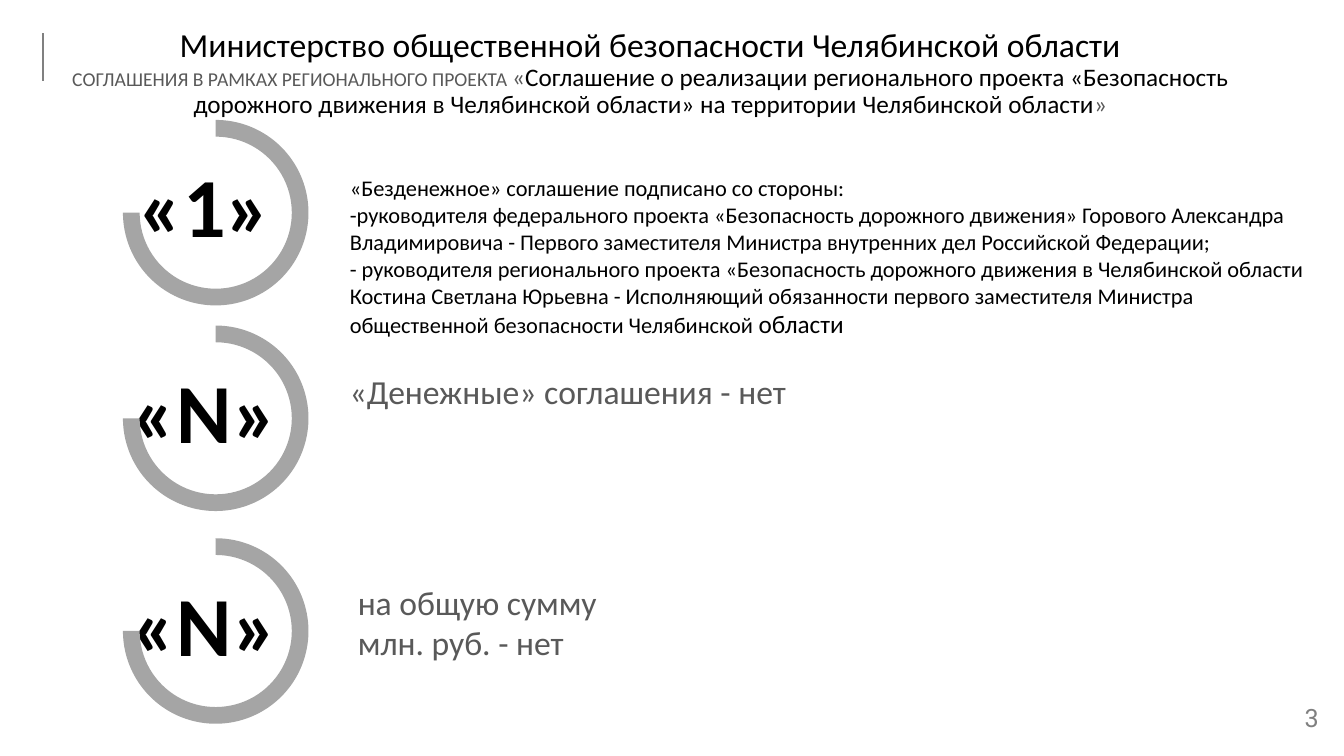
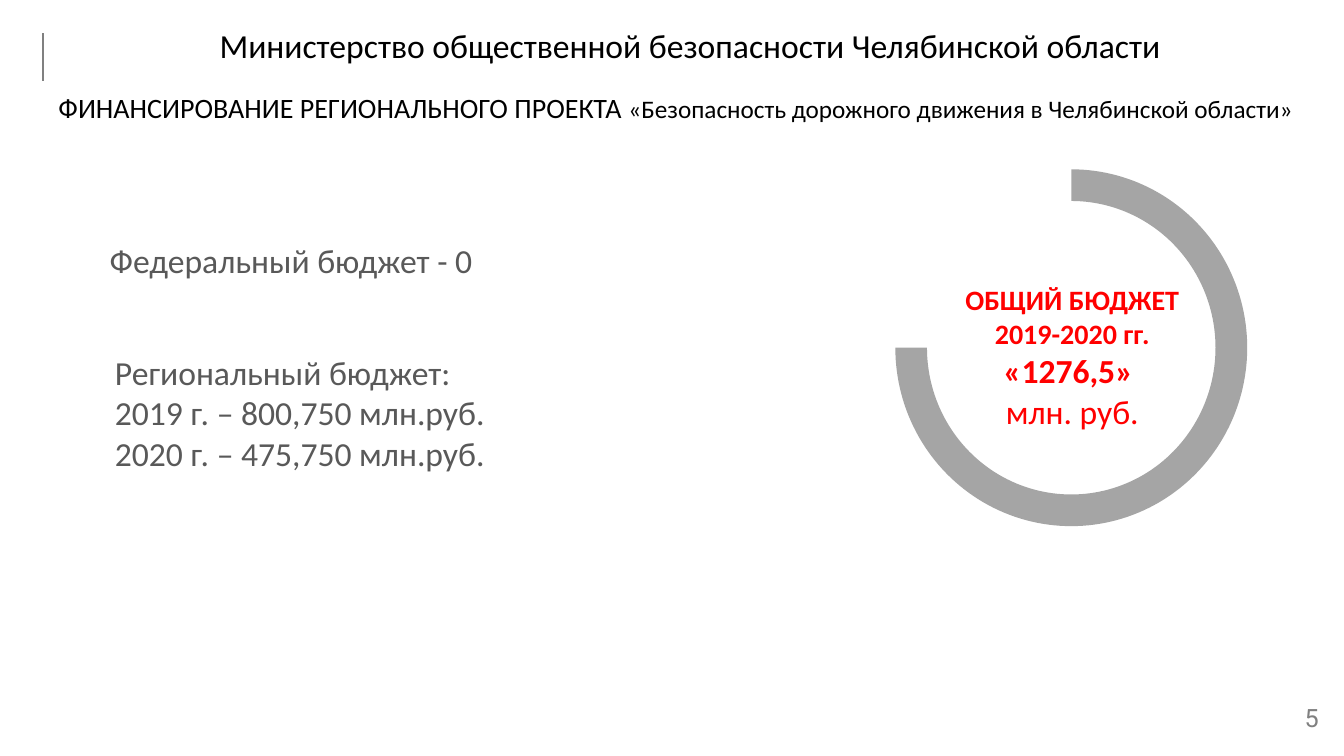
from dataclasses import dataclass

from pptx import Presentation
from pptx.dml.color import RGBColor
from pptx.enum.shapes import MSO_CONNECTOR, MSO_SHAPE
from pptx.enum.text import MSO_ANCHOR, MSO_AUTO_SIZE, PP_ALIGN
from pptx.oxml.ns import qn
from pptx.shapes.base import BaseShape
from pptx.slide import Slide
from pptx.util import Emu, Pt

LEFT, MID, JUST = PP_ALIGN.LEFT, PP_ALIGN.CENTER, PP_ALIGN.JUSTIFY
TOP, CENTRE = MSO_ANCHOR.TOP, MSO_ANCHOR.MIDDLE
FIXED = MSO_AUTO_SIZE.NONE
ARC = MSO_SHAPE.BLOCK_ARC
STRAIGHT = MSO_CONNECTOR.STRAIGHT
PX = 9144  # EMU in one px, 100 px to the inch


@dataclass(frozen=True)
class Theme:
    font: str = "Calibri"
    page_font: str = "Roboto"
    ink: str = "000000"
    text: str = "595959"
    ring: str = "A5A5A5"
    muted: str = "808080"
    alert: str = "FF0000"
    tiny: int = 14
    small: int = 16
    note: int = 18
    sub: int = 20
    main: int = 24
    huge: int = 60


T = Theme()


@dataclass(frozen=True)
class Box:
    left: int
    top: int
    width: int
    height: int

    def emu(self) -> list[Emu]:
        return [Emu(v * PX) for v in (self.left, self.top, self.width, self.height)]


@dataclass(frozen=True)
class Run:
    text: str
    size: int = T.main
    color: str = T.text
    bold: bool = False
    font: str = T.font


@dataclass(frozen=True)
class Para:
    runs: tuple[Run, ...]
    align: PP_ALIGN = JUST
    line: float = 1.0
    before: int = 0


@dataclass(frozen=True)
class Mark:
    """A label in a ring, with the top edge of that ring."""
    label: str
    top: int


def rgb(color: str) -> RGBColor:
    return RGBColor.from_string(color)


def fill_text(shape: BaseShape, paras: list[Para], anchor: MSO_ANCHOR = TOP) -> None:
    frame = shape.text_frame
    frame.word_wrap = True
    frame.auto_size = FIXED
    frame.vertical_anchor = anchor
    for i, item in enumerate(paras):
        para = frame.add_paragraph() if i else frame.paragraphs[0]
        para.alignment = item.align
        para.line_spacing = item.line
        para.space_before = Pt(item.before)
        para.space_after = Pt(0)
        for part in item.runs:
            run = para.add_run()
            run.text = part.text
            run.font.name = part.font
            run.font.size = Pt(part.size)
            run.font.bold = part.bold
            run.font.color.rgb = rgb(part.color)


def place(shape: BaseShape, box: Box) -> None:
    shape.left, shape.top, shape.width, shape.height = box.emu()


def add_text(slide: Slide, box: Box, paras: list[Para], anchor: MSO_ANCHOR = TOP) -> None:
    fill_text(slide.shapes.add_textbox(*box.emu()), paras, anchor)


def fill_body(slide: Slide, box: Box, paras: list[Para]) -> None:
    """Fills the body placeholder with plain, unbulleted lines."""
    body = slide.placeholders[1]
    place(body, box)
    fill_text(body, paras)
    for para in body.text_frame.paragraphs:
        props = para._p.get_or_add_pPr()
        props.set("marL", "0")
        props.set("indent", "0")
        props.append(props.makeelement(qn("a:buNone"), {}))


def add_ring(slide: Slide, box: Box) -> None:
    """Draws three quarters of a ring, open at the upper left."""
    ring = slide.shapes.add_shape(ARC, *box.emu())
    ring.shadow.inherit = False
    for i, value in enumerate((162, 108, 0.09)):
        ring.adjustments[i] = value
    ring.fill.solid()
    ring.fill.fore_color.rgb = rgb(T.ring)
    ring.line.fill.background()


def add_slide(deck: Presentation, page: str, box: Box, title: list[Para]) -> Slide:
    """Adds a slide with its title, side rule and page number."""
    slide = deck.slides.add_slide(deck.slide_layouts[1])
    place(slide.shapes.title, box)
    head = Para((Run("Министерство общественной безопасности Челябинской области",
                     color=T.ink),), MID, 0.9)
    fill_text(slide.shapes.title, [head, *title], CENTRE)
    rule = slide.shapes.add_connector(
        STRAIGHT, *(Emu(v * PX) for v in (43, 33, 43, 80)))
    rule.line.color.rgb = rgb(T.muted)
    rule.line.width = Pt(1.5)
    props = rule._element.spPr
    props.append(props.makeelement(qn("a:effectLst"), {}))
    number = Run(page, T.note, T.muted, font=T.page_font)
    add_text(slide, Box(1269, 690, 64, 50), [Para((number,), MID, 0.8)], CENTRE)
    return slide


def add_deals(deck: Presentation) -> None:
    title = Para((
        Run("СОГЛАШЕНИЯ В РАМКАХ РЕГИОНАЛЬНОГО ПРОЕКТА ", T.tiny),
        Run("«", T.note),
        Run("Соглашение о реализации регионального проекта «Безопасность дорожного "
            "движения в Челябинской области» на территории Челябинской области",
            T.note, T.ink),
        Run("»", T.note)), MID, 0.9)
    slide = add_slide(deck, "3", Box(48, 26, 1194, 94), [title])
    lines = (
        "«Безденежное» соглашение подписано со стороны:",
        "-руководителя федерального проекта «Безопасность дорожного движения» "
        "Горового Александра Владимировича - Первого заместителя Министра "
        "внутренних дел Российской Федерации;",
        "- руководителя регионального проекта «Безопасность дорожного движения "
        "в Челябинской области Костина Светлана Юрьевна - Исполняющий обязанности "
        "первого заместителя Министра общественной безопасности Челябинской ",
    )
    runs = [(Run(line, T.small, T.ink),) for line in lines]
    runs[-1] += (Run("области", T.note, T.ink),)
    fill_body(slide, Box(337, 168, 977, 215), [Para(r, LEFT) for r in runs])
    for mark in (Mark("«1»", 119), Mark("«N»", 323), Mark("«N»", 534)):
        label = Run(mark.label, T.huge, T.ink, True)
        add_text(slide, Box(80, mark.top + 28, 246, 111), [Para((label,), MID)], CENTRE)
        add_ring(slide, Box(122, mark.top, 184, 184))
    add_text(slide, Box(337, 363, 566, 50), [Para((Run("«Денежные» соглашения - нет"),))])
    add_text(slide, Box(345, 572, 549, 91),
             [Para((Run(line),)) for line in ("на общую сумму", "млн. руб. - нет")])


def add_funds(deck: Presentation) -> None:
    title = Para((
        Run("ФИНАНСИРОВАНИЕ РЕГИОНАЛЬНОГО ПРОЕКТА ", T.sub, T.ink),
        Run("«Безопасность дорожного движения в Челябинской области»", T.note, T.ink),
    ), LEFT, 0.8, 22)
    slide = add_slide(deck, "5", Box(48, 26, 1273, 100), [title])
    add_ring(slide, Box(888, 168, 349, 354))
    add_text(slide, Box(99, 233, 566, 50), [Para((Run("Федеральный бюджет - 0"),))])
    lines = ("Региональный бюджет:", "2019 г. – 800,750 млн.руб.",
             "2020 г. – 475,750 млн.руб.")
    fill_body(slide, Box(104, 344, 398, 172), [Para((Run(line),)) for line in lines])
    total = (
        Run("ОБЩИЙ БЮДЖЕТ", T.sub, T.alert, True),
        Run("2019-2020 гг.", T.sub, T.alert, True),
        Run("«1276,5» ", T.main, T.alert, True),
        Run("млн. руб.", T.main, T.alert),
    )
    add_text(slide, Box(906, 275, 315, 158), [Para((run,), MID) for run in total], CENTRE)


def main() -> None:
    deck = Presentation()
    deck.slide_width, deck.slide_height = Emu(1333 * PX), Emu(750 * PX)
    add_deals(deck)
    add_funds(deck)
    deck.save("out.pptx")


if __name__ == "__main__":
    main()
